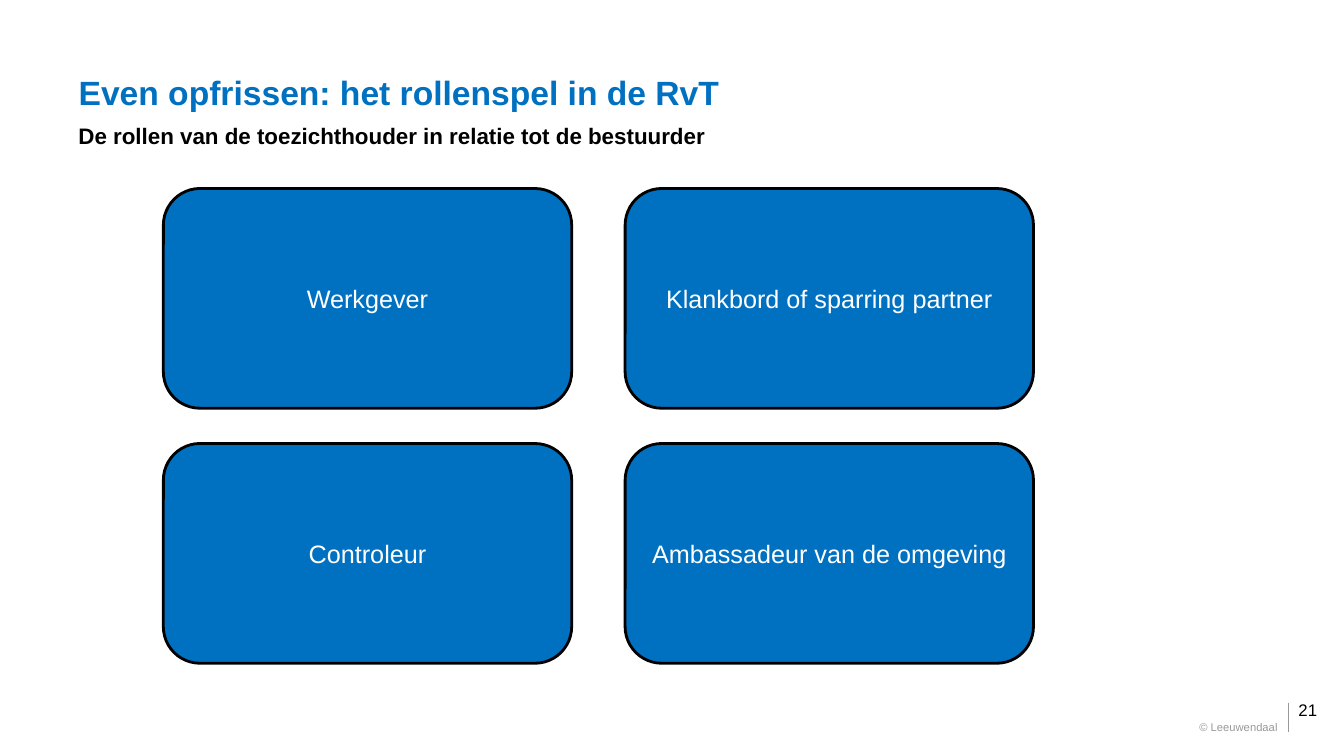
from pptx import Presentation
from pptx.dml.color import RGBColor
from pptx.enum.shapes import MSO_CONNECTOR as Connector, MSO_SHAPE as Shape
from pptx.enum.text import MSO_ANCHOR as Anchor, PP_ALIGN as Align
from pptx.oxml.ns import qn
from pptx.util import Inches, Pt
from lxml import etree

BLUE, BLACK, WHITE, GREY = "0070C0", "000000", "FFFFFF", "999999"
ROLES = [
    ["Werkgever", "Klankbord of sparring partner"],
    ["Controleur", "Ambassadeur van de omgeving"],
]


def color(hex_value):
    return RGBColor.from_string(hex_value)


def set_text(shape, text, size, hex_value, bold=False, align=Align.LEFT,
             anchor=Anchor.TOP, inset=0.05):
    frame = shape.text_frame
    frame.text = text
    frame_format = {
        "word_wrap": True,
        "vertical_anchor": anchor,
        "margin_left": Inches(0.1),
        "margin_right": Inches(0.1),
        "margin_top": Inches(inset),
        "margin_bottom": Inches(inset),
    }
    for name, value in frame_format.items():
        setattr(frame, name, value)
    paragraph = frame.paragraphs[0]
    paragraph.alignment = align
    font = paragraph.runs[0].font
    for name, value in {"name": "Arial", "size": Pt(size), "bold": bold}.items():
        setattr(font, name, value)
    font.color.rgb = color(hex_value)


def add_title(slide, text):
    title = slide.shapes.title
    place = {"left": 0.68, "top": 0.66, "width": 12.22, "height": 0.5}
    for name, value in place.items():
        setattr(title, name, Inches(value))
    set_text(title, text, 24, BLUE, bold=True, anchor=Anchor.MIDDLE)


def add_label(slide, box, text, size, hex_value, **text_format):
    label = slide.shapes.add_textbox(*map(Inches, box))
    set_text(label, text, size, hex_value, **text_format)


def add_role(slide, left, top, text):
    role = slide.shapes.add_shape(
        Shape.ROUNDED_RECTANGLE,
        Inches(left), Inches(top), Inches(4.05), Inches(2.18))
    role.shadow.inherit = False
    role.fill.solid()
    role.fill.fore_color.rgb = color(BLUE)
    role.line.color.rgb = color(BLACK)
    role.line.width = Pt(2)
    set_text(role, text, 18, WHITE, align=Align.CENTER, anchor=Anchor.MIDDLE)


def add_divider(slide, x, top, bottom):
    divider = slide.shapes.add_connector(
        Connector.STRAIGHT, Inches(x), Inches(top), Inches(x), Inches(bottom))
    divider.line.color.rgb = color(GREY)
    divider.line.width = Pt(0.75)
    etree.SubElement(divider._element.spPr, qn("a:effectLst"))


def main():
    deck = Presentation()
    deck.slide_width, deck.slide_height = Inches(13.33), Inches(7.5)
    slide = deck.slides.add_slide(deck.slide_layouts[5])

    # Heading
    add_title(slide, "Even opfrissen: het rollenspel in de RvT")
    add_label(slide, (0.68, 1.16, 12, 0.37),
              "De rollen van de toezichthouder in relatie tot de bestuurder",
              16, BLACK, bold=True)

    # Grid of roles
    for row, roles in enumerate(ROLES):
        for column, role in enumerate(roles):
            add_role(slide, 1.62 + 4.58 * column, 1.87 + 2.53 * row, role)

    # Footer
    add_label(slide, (12.78, 6.94, 0.69, 0.2), "21", 12, BLACK, inset=0)
    add_divider(slide, 12.78, 6.97, 7.26)
    add_label(slide, (11.15, 7.15, 1.62, 0.13), "© Leeuwendaal", 8, GREY,
              align=Align.RIGHT, inset=0)

    deck.save("out.pptx")


if __name__ == "__main__":
    main()
